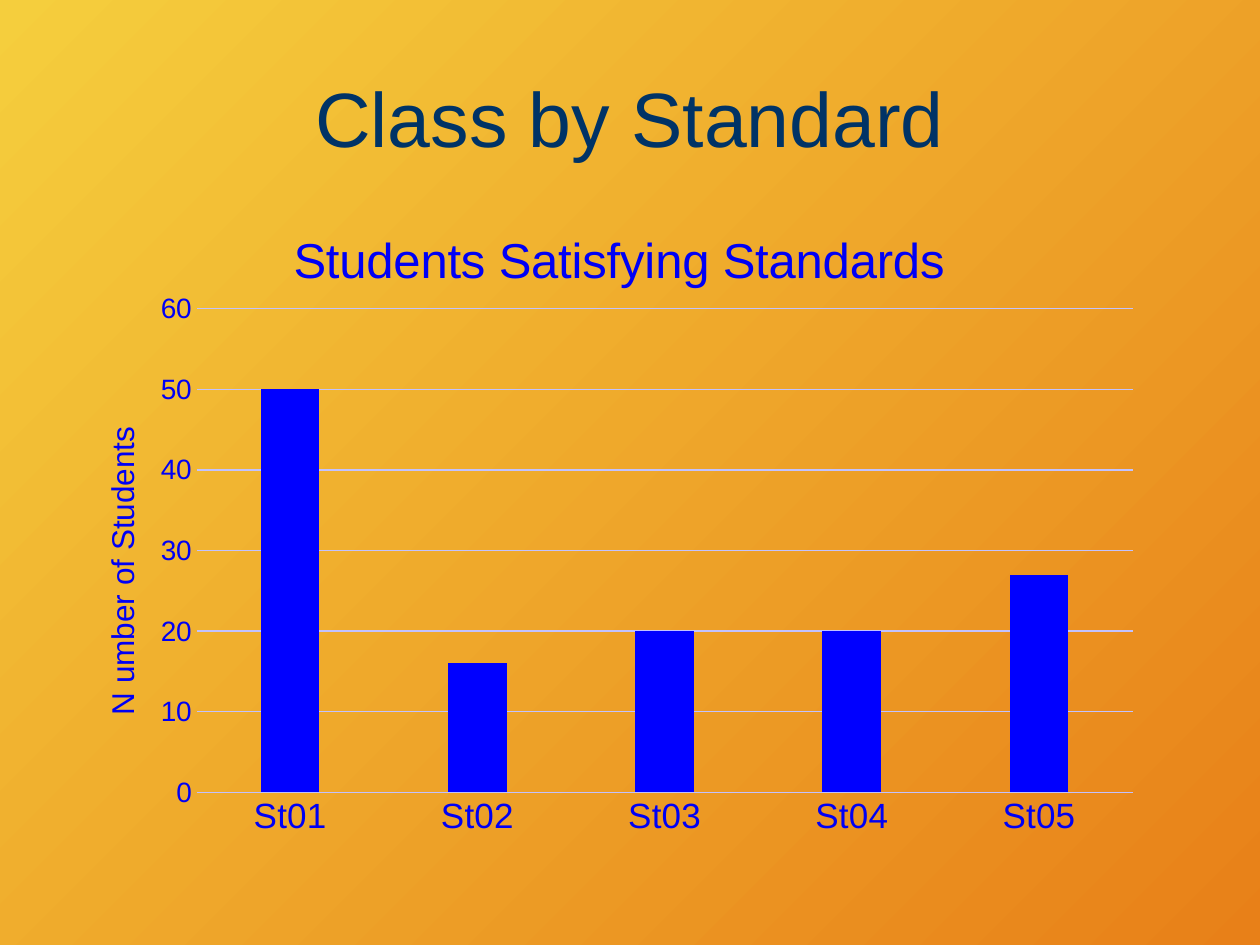
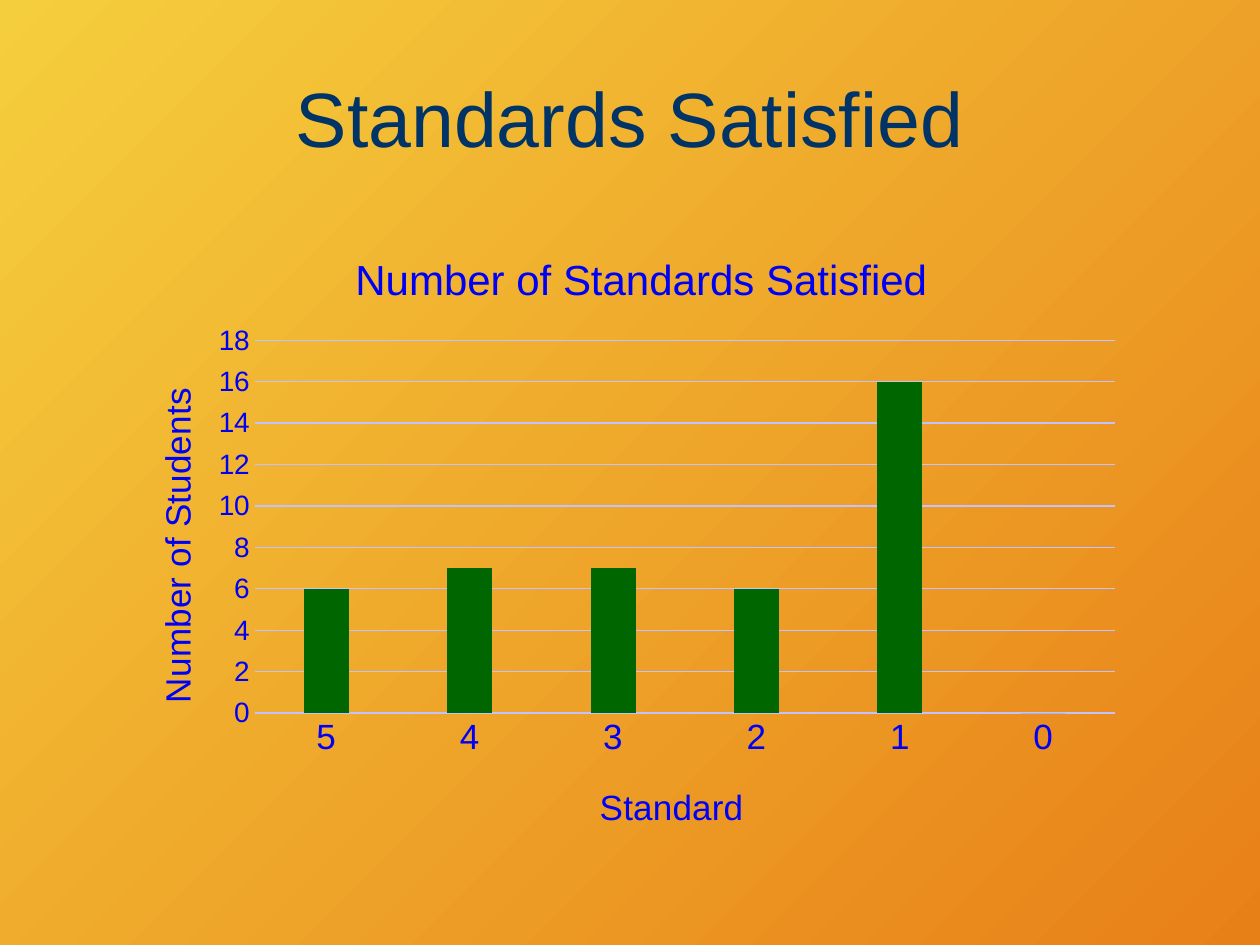
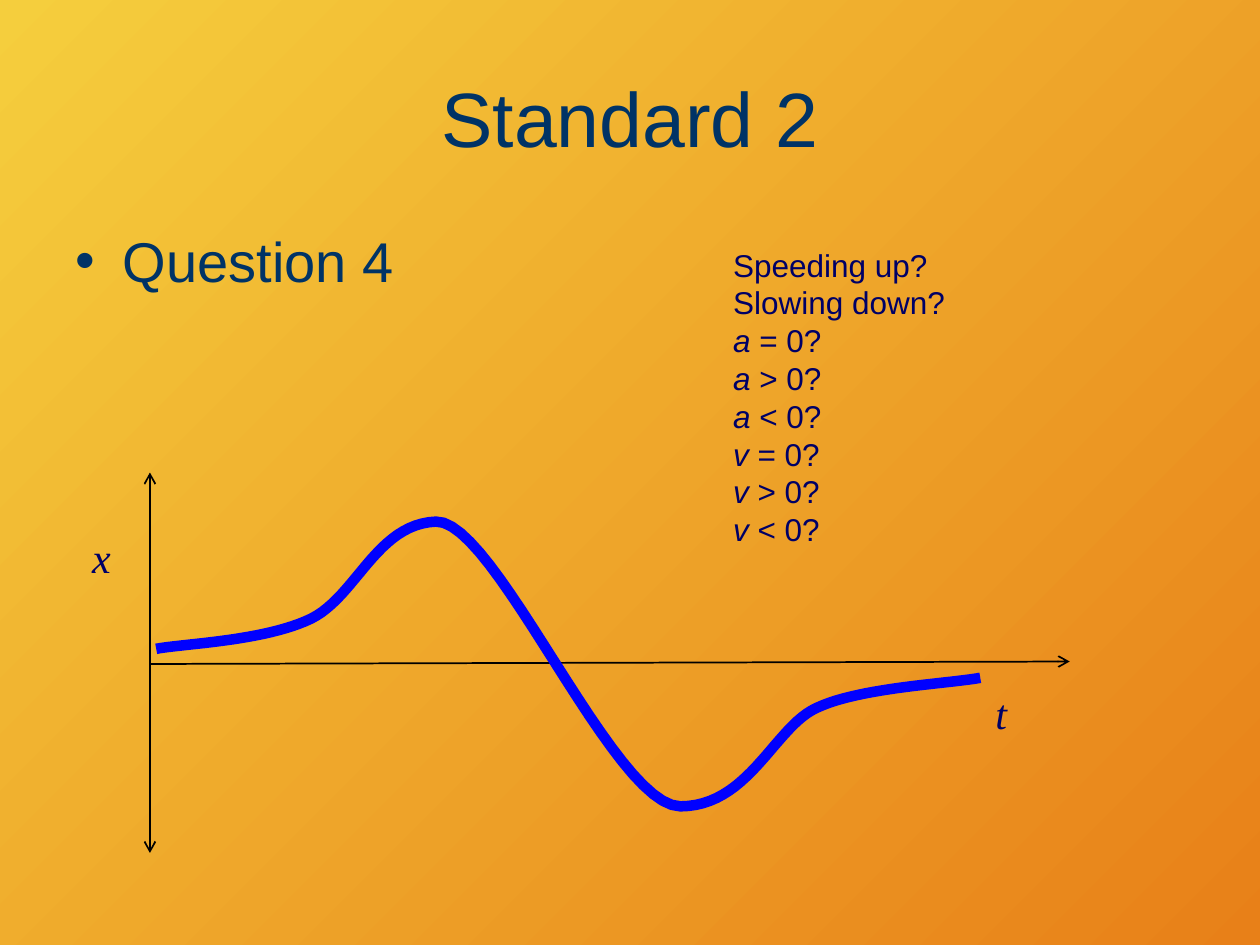
from dataclasses import dataclass
from itertools import product

from lxml import etree
from pptx import Presentation
from pptx import util as u
from pptx.chart.data import CategoryChartData
from pptx.dml.color import RGBColor
from pptx.enum import chart as charts, shapes, text
from pptx.oxml.ns import qn

PX = 9144
SANS, SERIF = "Arial", "Times New Roman"
TITLE_COLOR, TEXT_COLOR, CHART_TEXT = "003366", "000066", "0000F5"
BLUE, GREEN, GRID, BLACK = "0000FF", "006600", "C2C2FF", "000000"
BACKGROUND = ("F5CE3D", "E88018")
TITLE_BOX = (50, 30, 900, 125)
TITLE_ONLY, TITLE_AND_BODY = 5, 1
CURVE = [
    (71, 140), (91, 136), (157, 134), (194, 116),
    (230, 98), (246, 41), (293, 39),
    (340, 37), (434, 265), (487, 265),
    (539, 265), (560, 207), (591, 189),
    (623, 171), (697, 168), (725, 163),
]


@dataclass
class BarChart:
    """Content of a bar chart; places are px inside the chart box."""

    title: tuple
    value_title: tuple
    category_title: tuple
    values: dict
    color: str
    plot: tuple
    maximum: int
    step: int
    overlap: int


def emu(*lengths):
    """Turn px lengths into EMU."""
    return [u.Emu(round(length * PX)) for length in lengths]


def rgb(color):
    """Turn a hex string into a colour."""
    return RGBColor.from_string(color)


def set_font(font, size, color, name=SANS):
    """Format a font as plain text of one size and colour."""
    font.size, font.name, font.bold = u.Pt(size), name, False
    font.color.rgb = rgb(color)


def set_line(line, color, width):
    """Give a line its colour and width in points."""
    line.color.rgb = rgb(color)
    line.width = u.Pt(width)


def place(shape, box):
    """Move a shape to a px box."""
    shape.left, shape.top, shape.width, shape.height = emu(*box)


def set_background(master):
    """Fill the master with the diagonal gradient."""
    fill = master.background.fill
    fill.gradient()
    fill.gradient_angle = 315
    for stop, color, position in zip(fill.gradient_stops, BACKGROUND, (0, 1)):
        stop.color.rgb = rgb(color)
        stop.position = position


def add_slide(presentation, title, layout=TITLE_ONLY):
    """Add a slide with the shared title style."""
    slide = presentation.slides.add_slide(presentation.slide_layouts[layout])
    shape = slide.shapes.title
    place(shape, TITLE_BOX)
    shape.text_frame.text = title
    shape.text_frame.vertical_anchor = text.MSO_ANCHOR.MIDDLE
    paragraph = shape.text_frame.paragraphs[0]
    paragraph.alignment = text.PP_ALIGN.CENTER
    set_font(paragraph.font, 44, TITLE_COLOR)
    return slide


def set_layout(element, numbers, size, inner=False):
    """Fix a chart part at px numbers within a chart of the given size."""
    for old in element.findall(qn("c:layout")):
        element.remove(old)
    layout = etree.Element(qn("c:layout"))
    manual = etree.SubElement(layout, qn("c:manualLayout"))
    entries = [("layoutTarget", "inner")] if inner else []
    entries += [("xMode", "edge"), ("yMode", "edge")]
    entries += [(key, str(number / size[index % 2]))
                for index, (key, number) in enumerate(zip("xywh", numbers))]
    for key, value in entries:
        etree.SubElement(manual, qn(f"c:{key}")).set("val", value)
    element.insert(len(element.findall(qn("c:tx"))), layout)


def set_chart_title(title, content, chart_size):
    """Write a chart or axis title given as words, font size and position."""
    words, font_size, position = content
    title.text_frame.text = words
    set_font(title.text_frame.paragraphs[0].font, font_size, CHART_TEXT)
    set_layout(title._element, position, chart_size)


def add_bar_chart(slide, box, content):
    """Add a single-series column chart in the box."""
    data = CategoryChartData()
    data.categories = list(content.values)
    data.add_series("Series 1", list(content.values.values()))
    chart = slide.shapes.add_chart(
        charts.XL_CHART_TYPE.COLUMN_CLUSTERED, *emu(*box), data).chart
    size = box[2:]
    chart.has_legend = False
    set_font(chart.font, 10, TEXT_COLOR)
    set_chart_title(chart.chart_title, content.title, size)
    set_layout(chart._chartSpace.chart.plotArea, content.plot, size, inner=True)

    plot = chart.plots[0]
    plot.vary_by_categories = False
    plot.gap_width, plot.overlap = 219, content.overlap
    fill = plot.series[0].format.fill
    fill.solid()
    fill.fore_color.rgb = rgb(content.color)

    value_axis, category_axis = chart.value_axis, chart.category_axis
    for axis, font_size in ((value_axis, 16), (category_axis, 20)):
        axis.major_tick_mark = axis.minor_tick_mark = charts.XL_TICK_MARK.NONE
        set_font(axis.tick_labels.font, font_size, CHART_TEXT)
    value_axis.minimum_scale, value_axis.maximum_scale = 0, content.maximum
    value_axis.major_unit = content.step
    value_axis.format.line.fill.background()
    set_line(value_axis.major_gridlines.format.line, GRID, 0.75)
    set_line(category_axis.format.line, GRID, 0.75)
    set_chart_title(value_axis.axis_title, content.value_title, size)
    body = value_axis.axis_title._element.find(".//" + qn("a:bodyPr"))
    body.set("rot", "-5400000")
    body.set("vert", "horz")
    if content.category_title:
        set_chart_title(category_axis.axis_title, content.category_title, size)


def add_arrow(group, start, end, arrowheads):
    """Add a thin black axis with the named arrowheads."""
    axis = group.shapes.add_connector(
        shapes.MSO_CONNECTOR.STRAIGHT, *emu(*start, *end))
    set_line(axis.line, BLACK, 1)
    for arrowhead in arrowheads:
        etree.SubElement(axis.line._get_or_add_ln(), qn(f"a:{arrowhead}")).set("type", "arrow")
    etree.SubElement(axis._element.spPr, qn("a:effectLst"))


def add_axis_label(group, box, letter):
    """Add an italic axis letter."""
    frame = group.shapes.add_textbox(*emu(*box)).text_frame
    frame.word_wrap = True
    frame.margin_left = frame.margin_top = frame.margin_right = frame.margin_bottom = 0
    frame.text = letter
    paragraph = frame.paragraphs[0]
    paragraph.alignment = text.PP_ALIGN.CENTER
    paragraph.line_spacing, paragraph.space_after = 1.15, u.Pt(10)
    set_font(paragraph.font, 24, TEXT_COLOR, SERIF)
    paragraph.font.italic = True


def bezier_points(controls, steps=24):
    """Return points along a chain of cubic Bézier segments."""
    points = [controls[0]]
    for first in range(0, len(controls) - 1, 3):
        segment = controls[first:first + 4]
        for step in range(1, steps + 1):
            t = step / steps
            weights = ((1 - t) ** 3, 3 * t * (1 - t) ** 2, 3 * t * t * (1 - t), t ** 3)
            points.append(tuple(sum(weight * value for weight, value in zip(weights, values))
                                for values in zip(*segment)))
    return points


def add_motion_graph(slide, box):
    """Add the position-time graph in the box."""
    left, top, width, height = box
    group = slide.shapes.add_group_shape()
    origin = left + 66
    add_arrow(group, (origin, top + 152), (left + width, top + 150), ["tailEnd"])
    start, *rest = [emu(left + x, top + y) for x, y in bezier_points(CURVE)]
    builder = group.shapes.build_freeform(*start)
    builder.add_line_segments(rest, close=False)
    curve = builder.convert_to_shape()
    curve.shadow.inherit = False
    curve.fill.background()
    set_line(curve.line, BLUE, 6)
    add_arrow(group, (origin, top), (origin, top + height), ["headEnd", "tailEnd"])
    add_axis_label(group, (left, top + 41, 55, 55), "x")
    add_axis_label(group, (left + 714, top + 165, 55, 55), "t")


def add_questions(slide, box):
    """Add the list of questions about the motion."""
    frame = slide.shapes.add_textbox(*emu(*box)).text_frame
    frame.word_wrap = True
    frame.auto_size = text.MSO_AUTO_SIZE.SHAPE_TO_FIT_TEXT
    lines = [("", "Speeding up?"), ("", "Slowing down?")]
    lines += [(symbol, f" {sign} 0?") for symbol, sign in product("av", "=><")]
    for index, (symbol, words) in enumerate(lines):
        paragraph = frame.add_paragraph() if index else frame.paragraphs[0]
        set_font(paragraph.font, 18, TEXT_COLOR)
        for part, italic in ((symbol, True), (words, False)):
            if part:
                run = paragraph.add_run()
                run.text = part
                set_font(run.font, 18, TEXT_COLOR)
                run.font.italic = italic


def add_bullet(slide, box, words):
    """Fill the body placeholder with one bullet."""
    body = slide.placeholders[1]
    place(body, box)
    body.text_frame.text = words
    set_font(body.text_frame.paragraphs[0].font, 32, TITLE_COLOR)


def main():
    """Build and save the presentation."""
    presentation = Presentation()
    presentation.slide_width, presentation.slide_height = emu(1000, 750)
    set_background(presentation.slide_master)

    add_bar_chart(add_slide(presentation, "Class by Standard"), (50, 155, 867, 520), BarChart(
        title=("Students Satisfying Standards", 28, (176, 20)),
        value_title=("N umber of Students", 18, (26, 179)),
        category_title=(),
        values={"St01": 50, "St02": 16, "St03": 20, "St04": 20, "St05": 27},
        color=BLUE, plot=(106, 90, 743, 384), maximum=60, step=10, overlap=-27))

    add_bar_chart(add_slide(presentation, "Standards Satisfied"), (92, 175, 808, 500), BarChart(
        title=("Number of Standards Satisfied", 24, (184, 19)),
        value_title=("Number of Students", 20, (26, 128)),
        category_title=("Standard", 20, (379, 443)),
        values={"5": 6, "4": 7, "3": 7, "2": 6, "1": 16, "0": 0},
        color=GREEN, plot=(110, 95, 683, 296), maximum=18, step=2, overlap=0))

    slide = add_slide(presentation, "Standard 2", TITLE_AND_BODY)
    add_bullet(slide, (50, 175, 308, 75), "Question 4")
    add_motion_graph(slide, (53, 375, 796, 302))
    add_questions(slide, (572, 190, 242, 252))
    presentation.save("out.pptx")


if __name__ == "__main__":
    main()
